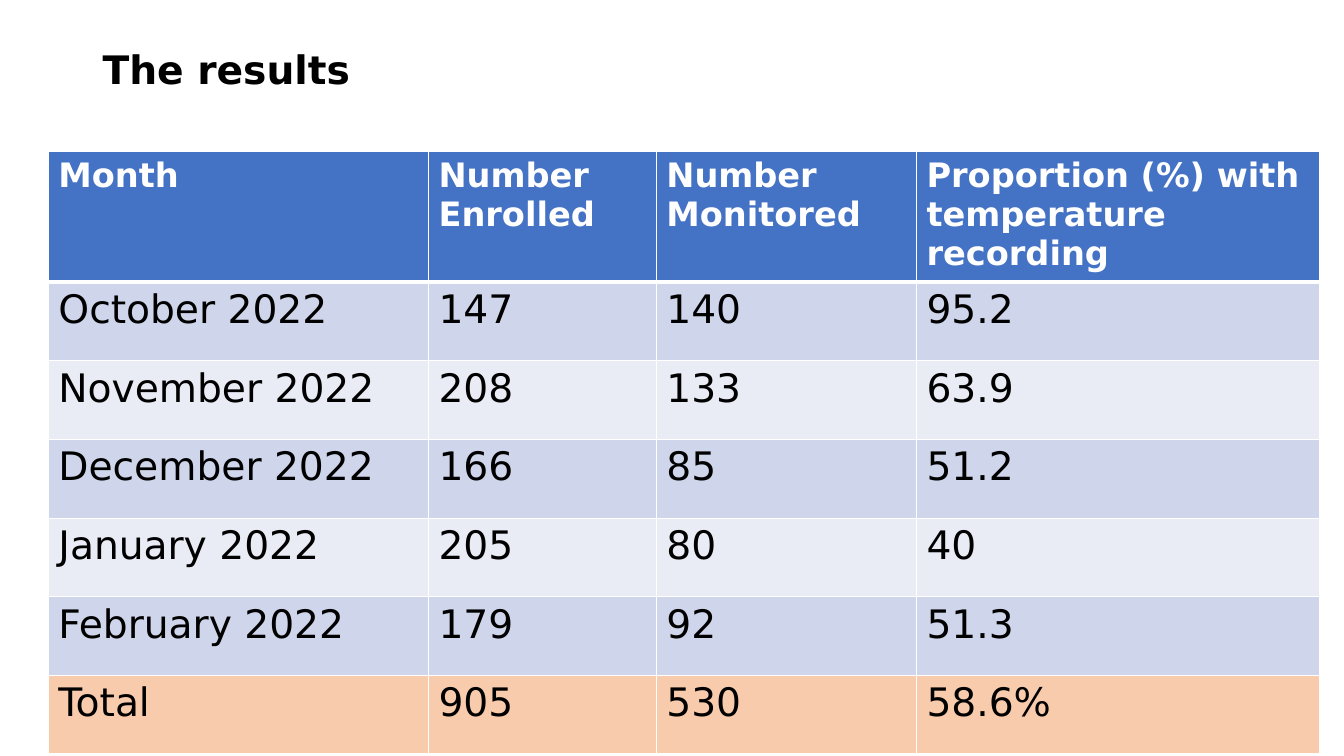
"""Build the results slide: monthly enrolment and temperature monitoring."""
from dataclasses import dataclass

from lxml.etree import SubElement
from pptx import Presentation
from pptx.dml.color import RGBColor as RGB
from pptx.enum.text import MSO_ANCHOR as Anchor
from pptx.oxml.ns import qn
from pptx.util import Inches, Pt

TITLE = "The results"
HEADINGS = ("Month", "Number Enrolled", "Number Monitored",
            "Proportion (%) with temperature recording")
MONTHS = [
    ("October 2022", "147", "140", "95.2"),
    ("November 2022", "208", "133", "63.9"),
    ("December 2022", "166", "85", "51.2"),
    ("January 2022", "205", "80", "40"),
    ("February 2022", "179", "92", "51.3"),
]
TOTAL = ("Total", "905", "530", "58.6%")

COLUMN_WIDTHS = (3.77, 2.26, 2.58, 4)
HEADING_HEIGHT, MONTH_HEIGHT = 1.03, 0.78


@dataclass(frozen=True)
class Theme:
    font: str = "DejaVu Sans"
    ink: str = "000000"
    white: str = "FFFFFF"
    heading: str = "4472C4"
    bands: tuple = ("CFD5EA", "E9EBF5")
    total: str = "F8CBAD"
    heading_size: int = 24
    text_size: int = 28
    rule: int = 1
    heading_rule: int = 3


THEME = Theme()


def write(frame, text, *, size=THEME.text_size, color=THEME.ink, bold=False, spacing=None):
    frame.word_wrap = True
    paragraph = frame.paragraphs[0]
    paragraph.line_spacing = spacing
    run = paragraph.add_run()
    run.text = text
    run.font.name = THEME.font
    run.font.size = Pt(size)
    run.font.bold = bold
    run.font.color.rgb = RGB.from_string(color)


def style_cell(cell, fill, top, bottom):
    properties = cell._tc.get_or_add_tcPr()
    for side, width in (("L", THEME.rule), ("R", THEME.rule), ("T", top), ("B", bottom)):
        border = SubElement(properties, qn(f"a:ln{side}"), w=str(Pt(width)))
        SubElement(SubElement(border, qn("a:solidFill")), qn("a:srgbClr"), val=THEME.white)
    cell.fill.solid()
    cell.fill.fore_color.rgb = RGB.from_string(fill)


def add_title(slide):
    title = slide.shapes.add_textbox(Inches(0.92), Inches(0.4), Inches(11.5), Inches(0.62))
    title.text_frame.vertical_anchor = Anchor.MIDDLE
    write(title.text_frame, TITLE, bold=True, spacing=0.9)


def add_results(slide):
    rows = [HEADINGS, *MONTHS, TOTAL]
    fills = [THEME.heading, *(THEME.bands[i % 2] for i in range(len(MONTHS))), THEME.total]
    heights = [HEADING_HEIGHT] + [MONTH_HEIGHT] * (len(rows) - 1)
    rules = [THEME.rule, THEME.heading_rule] + [THEME.rule] * (len(rows) - 1)
    results = slide.shapes.add_table(
        len(rows), len(HEADINGS), Inches(0.48), Inches(1.5),
        Inches(sum(COLUMN_WIDTHS)), Inches(sum(heights))).table
    for column, width in zip(results.columns, COLUMN_WIDTHS):
        column.width = Inches(width)
    heading_format = dict(size=THEME.heading_size, color=THEME.white, bold=True)
    for r, values in enumerate(rows):
        results.rows[r].height = Inches(heights[r])
        for c, value in enumerate(values):
            cell = results.cell(r, c)
            style_cell(cell, fills[r], rules[r], rules[r + 1])
            write(cell.text_frame, value, **({} if r else heading_format))


def main():
    deck = Presentation()
    deck.slide_width, deck.slide_height = Inches(13.33), Inches(7.5)
    slide = deck.slides.add_slide(deck.slide_layouts[6])
    add_title(slide)
    add_results(slide)
    deck.save("out.pptx")


if __name__ == "__main__":
    main()
